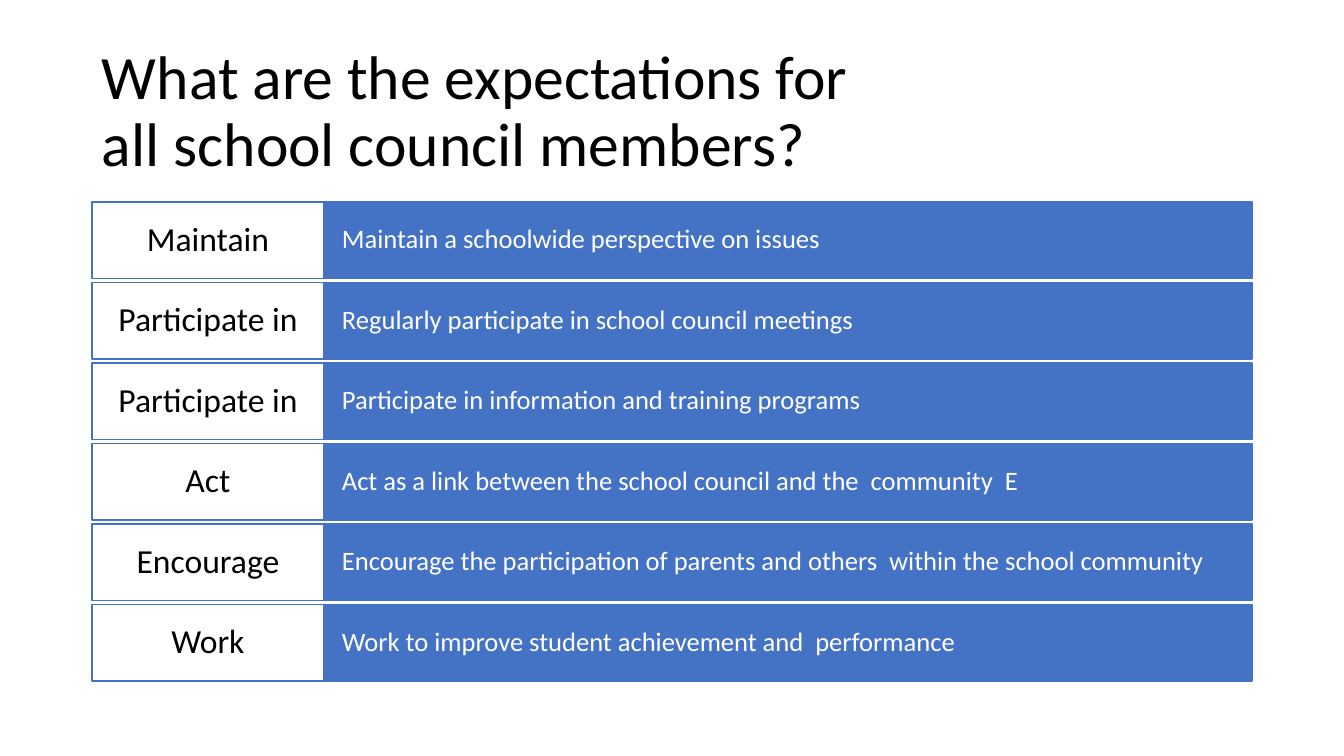
import pptx
import pptx.dml.color
import pptx.enum.shapes
import pptx.enum.text
import pptx.util

EMU_PER_PX = 914400 / 100.8
FONT = "Calibri"
BLUE = "4472C4"
WHITE = "FFFFFF"
BLACK = "000000"
ROW_GAP = 4
LABEL_WIDTH = 232

EXPECTATIONS = [
    ("Maintain", "Maintain a schoolwide perspective on issues"),
    ("Participate in", "Regularly participate in school council meetings"),
    ("Participate in", "Participate in information and training programs"),
    ("Act", "Act as a link between the school council and the  community  E"),
    ("Encourage", "Encourage the participation of parents and others  within the school community"),
    ("Work", "Work to improve student achievement and  performance"),
]


def px(length):
    return pptx.util.Emu(round(length * EMU_PER_PX))


def color(value):
    return pptx.dml.color.RGBColor.from_string(value)


def place(shape, box):
    shape.left, shape.top, shape.width, shape.height = map(px, box)


def write(shape, text, size, ink, align, margins):
    frame = shape.text_frame
    frame.text = text
    frame.word_wrap = True
    frame.auto_size = pptx.enum.text.MSO_AUTO_SIZE.NONE
    frame.vertical_anchor = pptx.enum.text.MSO_ANCHOR.MIDDLE
    frame.margin_left, frame.margin_top, frame.margin_right, frame.margin_bottom = map(px, margins)
    para = frame.paragraphs[0]
    para.alignment = align
    para.line_spacing = 0.9
    font = para.runs[0].font
    font.name = FONT
    font.size = pptx.util.Pt(size)
    font.color.rgb = color(ink)


def add_title(page, box):
    title = page.shapes.title
    place(title, box)
    write(title, "What are the expectations for all school council members?",
          44, BLACK, pptx.enum.text.PP_ALIGN.LEFT, (10, 5, 370, 5))


def add_cell(page, box, fill):
    cell = page.shapes.add_shape(pptx.enum.shapes.MSO_SHAPE.RECTANGLE, *map(px, box))
    cell.shadow.inherit = False
    cell.fill.solid()
    cell.fill.fore_color.rgb = color(fill)
    cell.line.color.rgb = color(BLUE)
    cell.line.width = pptx.util.Pt(1)
    return cell


def add_expectations(page, box):
    left, top, width, height = box
    pitch = (height + ROW_GAP) / len(EXPECTATIONS)
    row_height = pitch - ROW_GAP
    for index, (label, detail) in enumerate(EXPECTATIONS):
        row_top = top + index * pitch
        detail_cell = add_cell(
            page, (left + LABEL_WIDTH, row_top, width - LABEL_WIDTH, row_height), BLUE)
        write(detail_cell, detail, 19, WHITE, pptx.enum.text.PP_ALIGN.LEFT, (18, 19, 18, 19))
        label_cell = add_cell(page, (left, row_top, LABEL_WIDTH, row_height), WHITE)
        write(label_cell, label, 24, BLACK, pptx.enum.text.PP_ALIGN.CENTER, (12, 7, 12, 7))


def main():
    deck = pptx.Presentation()
    deck.slide_width = px(1344)
    deck.slide_height = px(756)
    page = deck.slides.add_slide(deck.slide_layouts.get_by_name("Title Only"))
    add_title(page, (92, 40, 1160, 146))
    add_expectations(page, (92, 202, 1160, 479))
    deck.save("out.pptx")


if __name__ == "__main__":
    main()
